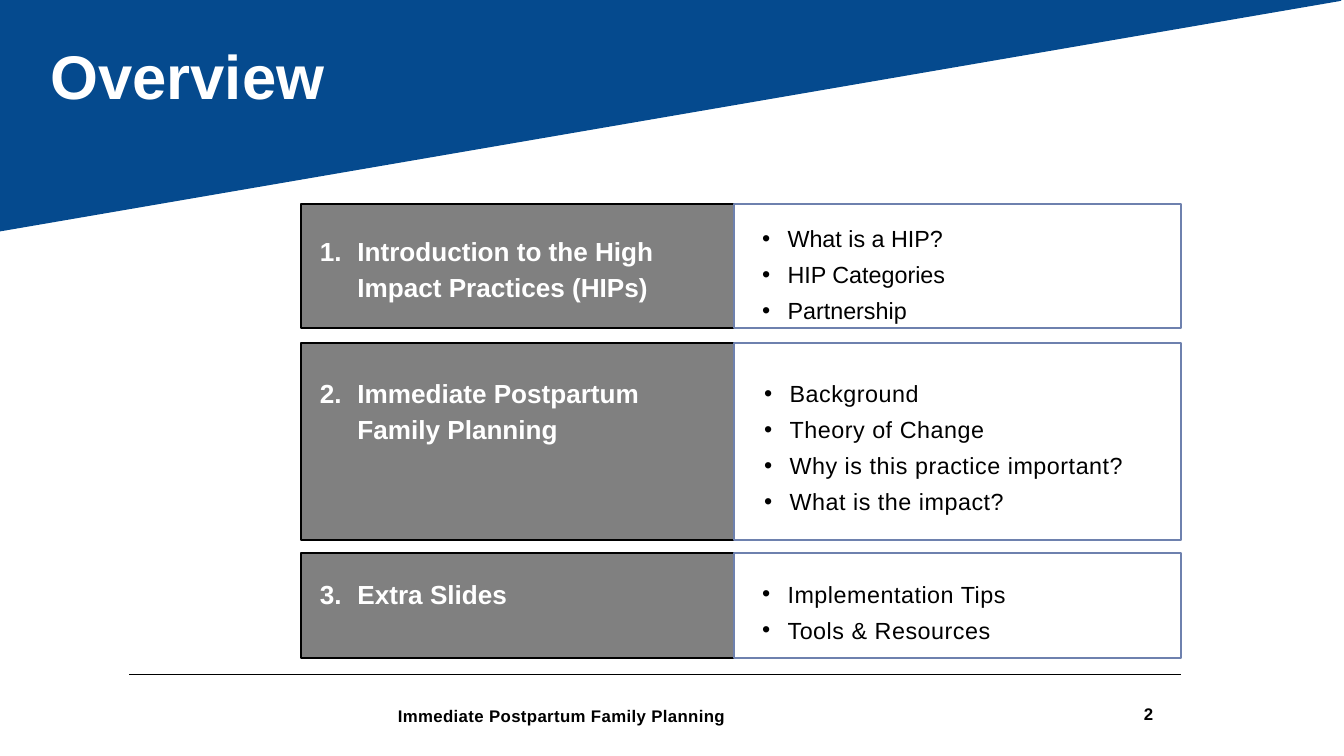
import pptx
import pptx.dml.color
import pptx.enum.shapes
import pptx.enum.text
import pptx.oxml.ns
import pptx.util
from lxml import etree

COLUMNS, ROWS = 20, 11.25
UNIT = pptx.util.Inches(1)
LEFT, MIDDLE, RIGHT = 4.48, 10.92, 17.58
BLUE, GRAY, OUTLINE = "054A8E", "808080", "6E81AE"
BLACK, WHITE = "000000", "FFFFFF"
HEADING = {"size": pptx.util.Pt(28), "bold": True}
BULLET = {"size": pptx.util.Pt(25)}
FOOTER = {"size": pptx.util.Pt(18), "bold": True}

SECTIONS = [
    {"top": 3.03, "height": 1.85, "heading_top": 3.44, "list_at": (11.34, 3.22), "spacing": 0,
     "heading": "Introduction to the High Impact Practices (HIPs)",
     "topics": ["What is a HIP?", "HIP Categories", "Partnership"]},
    {"top": 5.11, "height": 2.92, "heading_top": 5.55, "list_at": (11.37, 5.53), "spacing": 0.6,
     "heading": "Immediate Postpartum Family Planning",
     "topics": ["Background", "Theory of Change", "Why is this practice important?",
                "What is the impact?"]},
    {"top": 8.23, "height": 1.56, "heading_top": 8.54, "list_at": (11.34, 8.51), "spacing": 0.6,
     "heading": "Extra Slides",
     "topics": ["Implementation Tips", "Tools & Resources"]},
]


def grid(*cells):
    """Turn grid columns and rows into slide lengths."""
    return [round(cell * UNIT) for cell in cells]


def color(hex_value):
    """Turn a hex string into a colour."""
    return pptx.dml.color.RGBColor.from_string(hex_value)


def paint(shape, fill, line):
    """Give a shape its fill and outline, without a shadow."""
    shape.shadow.inherit = False
    shape.fill.solid()
    shape.fill.fore_color.rgb = color(fill)
    shape.line.color.rgb = color(line)
    shape.line.width = pptx.util.Pt(2)


def add_panel(slide, left, top, right, height, fill, line):
    """Draw one rectangular panel between two column edges."""
    shape = slide.shapes.add_shape(pptx.enum.shapes.MSO_SHAPE.RECTANGLE,
                                   *grid(left, top, right - left, height))
    paint(shape, fill, line)


def add_banner(slide):
    """Draw the slanted title banner."""
    builder = slide.shapes.build_freeform(0, 0, scale=1.0)
    builder.add_line_segments([grid(0, 3.43), grid(19.95, 0)], close=True)
    paint(builder.convert_to_shape(), BLUE, BLUE)


def add_rule(slide):
    """Draw the thin line above the footer."""
    rule = slide.shapes.add_connector(pptx.enum.shapes.MSO_CONNECTOR.STRAIGHT,
                                      *grid(1.92, 10.04, RIGHT, 10.04))
    rule.line.color.rgb = color(BLACK)
    rule.line.width = pptx.util.Pt(0.75)
    etree.SubElement(rule._element.spPr, pptx.oxml.ns.qn("a:effectLst"))


def add_marker(paragraph, indent, tag, **attributes):
    """Give a paragraph a hanging indent and a bullet or number."""
    properties = paragraph._p.get_or_add_pPr()
    margin = grid(indent)[0]
    properties.set("marL", str(margin))
    properties.set("indent", str(-margin))
    etree.SubElement(properties, pptx.oxml.ns.qn("a:buFont"), typeface="Arial")
    etree.SubElement(properties, pptx.oxml.ns.qn(tag), **attributes)


def add_text(slide, box, lines, font, text_color, leading=None, spacing=0, marker=None):
    """Add a text box without insets and return its frame."""
    frame = slide.shapes.add_textbox(*grid(*box)).text_frame
    frame.word_wrap = True
    for side in ("left", "top", "right", "bottom"):
        setattr(frame, f"margin_{side}", 0)
    for index, line in enumerate(lines):
        paragraph = frame.add_paragraph() if index else frame.paragraphs[0]
        if leading:
            paragraph.line_spacing = pptx.util.Pt(leading)
        if marker:
            add_marker(paragraph, **marker)
        run = paragraph.add_run()
        run.text = line
        for name, value in {"name": "Arial", **font}.items():
            setattr(run.font, name, value)
        run.font.color.rgb = color(text_color)
        if spacing:
            run._r.get_or_add_rPr().set("spc", str(round(spacing * 100)))
    return frame


def add_section(slide, number, section):
    """Draw a numbered heading panel and its panel of topics."""
    top, height = section["top"], section["height"]
    add_panel(slide, LEFT, top, MIDDLE, height, GRAY, BLACK)
    add_panel(slide, MIDDLE, top, RIGHT, height, WHITE, OUTLINE)
    numbering = {"indent": 0.56, "tag": "a:buAutoNum", "type": "arabicPeriod",
                 "startAt": str(number)}
    add_text(slide, (4.76, section["heading_top"], 5.58, 1.02), [section["heading"]],
             HEADING, WHITE, 38.5, marker=numbering)
    topics = section["topics"]
    add_text(slide, (*section["list_at"], 5.8, 0.53 * len(topics)), topics, BULLET, BLACK,
             38.5, section["spacing"], {"indent": 0.38, "tag": "a:buChar", "char": "•"})


def add_footer(slide):
    """Add the rule, the running title and the slide number."""
    add_rule(slide)
    add_text(slide, (5.92, 10.45, 10.7, 0.33), ["Immediate Postpartum Family Planning"],
             FOOTER, BLACK, 25.2, 0.4)
    frame = add_text(slide, (15.03, 10.42, 2.13, 0.4), ["2"], FOOTER, BLACK)
    frame.vertical_anchor = pptx.enum.text.MSO_ANCHOR.MIDDLE
    frame.paragraphs[0].alignment = pptx.enum.text.PP_ALIGN.RIGHT


def main():
    """Build the overview slide and save it."""
    presentation = pptx.Presentation()
    presentation.slide_width, presentation.slide_height = grid(COLUMNS, ROWS)
    slide = presentation.slides.add_slide(presentation.slide_layouts[6])
    add_footer(slide)
    add_banner(slide)
    add_text(slide, (0.75, 0.61, 5.68, 1.07), ["Overview"],
             {"size": pptx.util.Pt(66), "bold": True}, WHITE, 75.6)
    for number, section in enumerate(SECTIONS, start=1):
        add_section(slide, number, section)
    presentation.save("out.pptx")


if __name__ == "__main__":
    main()
